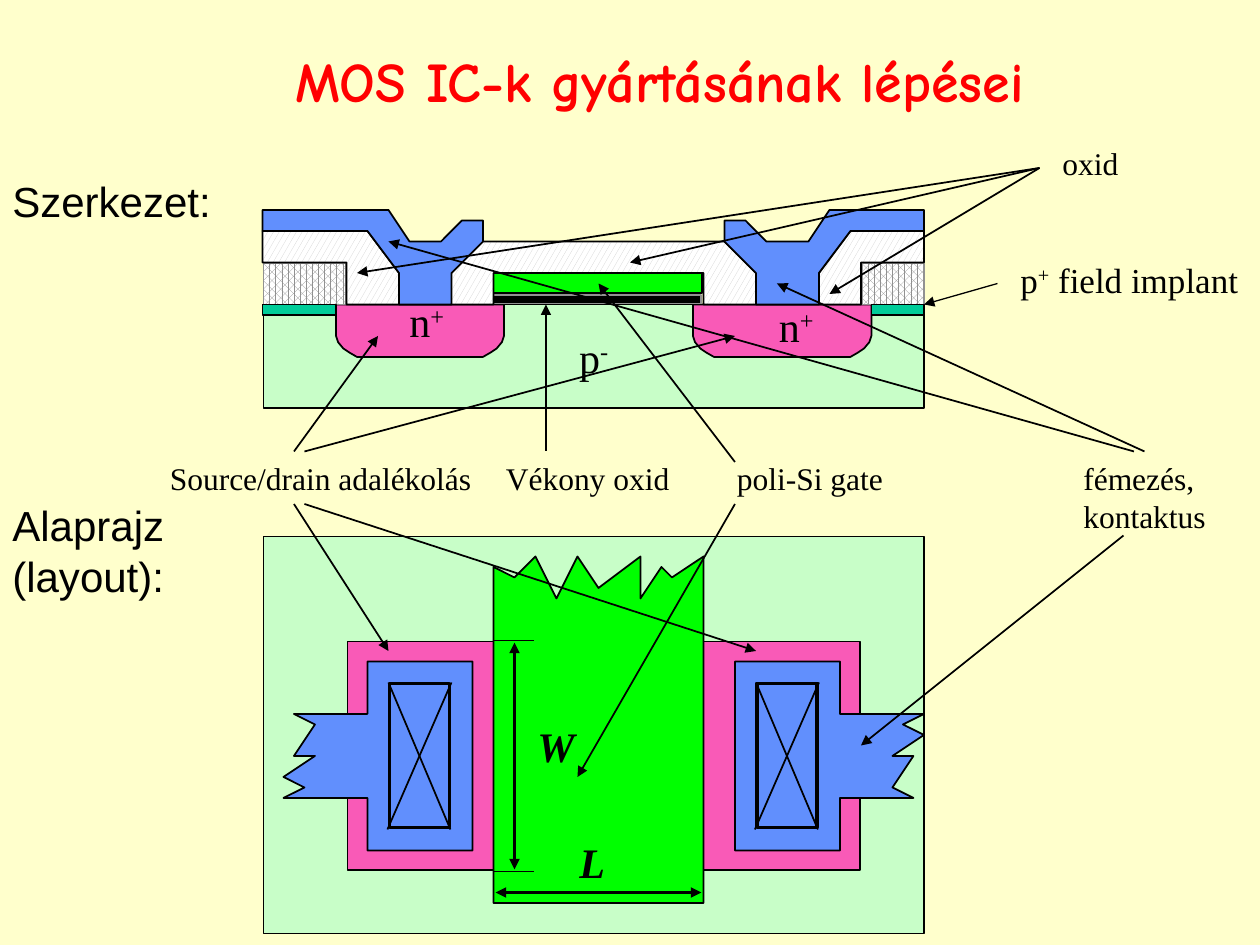
from dataclasses import dataclass
from lxml import etree
from pptx import Presentation
from pptx.dml.color import RGBColor
from pptx.enum.dml import MSO_PATTERN
from pptx.enum.shapes import MSO_CONNECTOR, MSO_SHAPE
from pptx.enum.text import MSO_ANCHOR, MSO_AUTO_SIZE, PP_ALIGN
from pptx.oxml.ns import qn
from pptx.util import Cm, Pt

RECT = MSO_SHAPE.RECTANGLE
STRAIGHT = MSO_CONNECTOR.STRAIGHT
DOTS = MSO_PATTERN.PERCENT_70
FLAKES = MSO_PATTERN.LARGE_CONFETTI
MIDDLE = MSO_ANCHOR.MIDDLE
GROW = MSO_AUTO_SIZE.SHAPE_TO_FIT_TEXT
CENTER = PP_ALIGN.CENTER
GRID = 2.54 / 12


@dataclass(frozen=True)
class Theme:
    """Colours, fonts and type sizes of the slide."""
    back: str = "FFFFCC"
    ink: str = "000000"
    title: str = "FF0000"
    base: str = "C8FEC8"
    doped: str = "F95AB7"
    gate: str = "00FF00"
    metal: str = "618FFD"
    field: str = "00CC99"
    grey: str = "919191"
    pale: str = "CECECE"
    white: str = "FFFFFF"
    serif: str = "Times New Roman"
    sans: str = "Arial"
    comic: str = "Comic Neue"
    small: int = 18
    note: int = 20
    large: int = 24
    head: int = 32


T = Theme()


def rgb(code):
    """Turn a hex code into a colour."""
    return RGBColor.from_string(code)


def apply(item, form):
    """Set each format value on the item."""
    for key, value in form.items():
        setattr(item, key, value)


def write(frame, runs, size=T.large, face=T.serif, hue=T.ink, **form):
    """Write runs in one paragraph; a run may be raised."""
    for part in runs:
        text, rise = part if isinstance(part, tuple) else (part, 0)
        run = frame.paragraphs[0].add_run()
        run.text = text
        apply(run.font, {"size": Pt(size), "name": face, **form})
        run.font.color.rgb = rgb(hue)
        if rise:
            run.font._element.set("baseline", str(rise * 1000))


@dataclass
class Box:
    """A region whose parts are placed in twelfths of an inch."""
    shapes: object
    left: float
    top: float

    def spot(self, x, y):
        """Place a point of the region on the slide."""
        return Cm((self.left + x) * GRID), Cm((self.top + y) * GRID)

    def paint(self, shape, fill, edge=T.ink, width=1):
        """Give a shape its plain or patterned fill and its edge."""
        shape.shadow.inherit = False
        if isinstance(fill, tuple):
            shape.fill.patterned()
            shape.fill.pattern = fill[0]
            shape.fill.fore_color.rgb = rgb(fill[1])
            shape.fill.back_color.rgb = rgb(T.white)
        else:
            shape.fill.solid()
            shape.fill.fore_color.rgb = rgb(fill)
        shape.line.color.rgb = rgb(edge)
        shape.line.width = Pt(width)
        return shape

    def rect(self, x, y, w, h, *look):
        """Draw a rectangle."""
        shape = self.shapes.add_shape(RECT, *self.spot(x, y), Cm(w * GRID), Cm(h * GRID))
        return self.paint(shape, *look)

    def poly(self, points, *look):
        """Draw a closed outline."""
        spots = [self.spot(*point) for point in points]
        build = self.shapes.build_freeform(*spots[0])
        build.add_line_segments(spots[1:], close=True)
        return self.paint(build.convert_to_shape(), *look)

    def line(self, start, end, width=1, tips=()):
        """Draw a line with arrowheads at the named ends."""
        link = self.shapes.add_connector(STRAIGHT, *self.spot(*start), *self.spot(*end))
        link.line.color.rgb = rgb(T.ink)
        link.line.width = Pt(width)
        for tip in tips:
            etree.SubElement(link.line._get_or_add_ln(), qn(f"a:{tip}End")).set("type", "triangle")
        etree.SubElement(link._element.spPr, qn("a:effectLst"))

    def text(self, x, y, w, h, runs, wrap=True, **form):
        """Place a text box."""
        box = self.shapes.add_textbox(*self.spot(x, y), Cm(w * GRID), Cm(h * GRID))
        apply(box.text_frame, {"word_wrap": wrap, "auto_size": GROW})
        write(box.text_frame, runs, **form)


def well(box, x, w):
    """Draw a doped well with bevelled lower corners."""
    side = [(0, 0), (0, 3), (0.2, 3.6), (0.7, 4.2), (1.3, 4.6), (2, 5), (2.8, 5)]
    far = [(w - dx, dy) for dx, dy in reversed(side)]
    box.poly([(x + dx, 9 + dy) for dx, dy in side + far], T.doped)


def section(box):
    """Draw the cross section of the transistor."""
    base = box.rect(0.1, 9, 62.9, 9.9, T.base)
    apply(base.text_frame, {"word_wrap": False, "vertical_anchor": MIDDLE})
    base.text_frame.paragraphs[0].alignment = CENTER
    write(base.text_frame, ["p", ("-", 30)])
    for x, w in ((7, 16), (41, 17)):
        well(box, x, w)
    box.rect(22, 8.1, 19.8, 0.8, T.ink, T.grey)
    for x, w in ((57.1, 5.9), (0.1, 7.8)):
        box.rect(x, 5.1, w, 3.9, (DOTS, T.grey), T.grey)
    box.rect(22, 6, 19.9, 1.9, T.gate)
    box.poly([(0, 2), (10, 2), (13, 6), (18, 6), (21, 3), (44, 3), (47, 6),
              (53, 6), (56, 2), (63, 2), (63, 5), (57, 5), (57, 9), (42, 9),
              (42, 6), (22, 6), (22, 9), (8, 9), (8, 5), (0, 5)], (FLAKES, T.pale))
    box.poly([(0, 0), (12, 0), (14, 3), (17, 3), (19, 1), (21, 1), (21, 3),
              (18, 6), (18, 9), (13, 9), (13, 6), (10, 2), (0, 2)], T.metal)
    box.poly([(44, 3), (44, 1), (46, 1), (48, 3), (52, 3), (54, 0), (63, 0),
              (63, 2), (56, 2), (53, 6), (53, 9), (47, 9), (47, 6)], T.metal)
    for x, w in ((0, 7), (58, 5)):
        box.rect(x, 9, w, 1, T.field, T.ink, 0.75)
    for x, y in ((12.8, 7.6), (48, 8)):
        box.text(x, y, 5.9, 6, ["n", ("+", 30)], wrap=False)


def hole(box, x):
    """Draw a crossed contact window."""
    box.rect(x + 0.1, 14.1, 5.7, 13.7, T.metal, T.ink, 2)
    box.line((x, 14), (x + 5.9, 28))
    box.line((x + 6, 14), (x - 0.1, 28))


def plan(box):
    """Draw the layout seen from above."""
    box.rect(0.1, 0.1, 62.9, 37.8, T.base)
    box.rect(8.1, 10.1, 48.8, 21.8, T.doped)
    box.poly([(22, 3), (24, 4), (26, 2), (28, 6), (30, 2), (32, 5), (36, 2),
              (36, 6), (38, 3), (39, 4), (42, 2), (42, 35), (22, 35)], T.gate)
    box.poly([(45, 12), (55, 12), (55, 17), (63, 17), (61, 18), (63, 19), (60, 21),
              (62, 21), (60, 24), (62, 25), (55, 25), (55, 30), (45, 30)], T.metal)
    box.poly([(20, 30), (10, 30), (10, 25), (2, 25), (4, 24), (2, 23), (5, 21),
              (3, 21), (5, 18), (3, 17), (10, 17), (10, 12), (20, 12)], T.metal)
    for x in (47, 12):
        hole(box, x)
    for y in (10, 32):
        box.line((22, y), (25.9, y))
    for start, end in (((22.2, 34), (41.8, 34)), ((24, 10.2), (24, 31.8))):
        box.line(start, end, 2, ("head", "tail"))
    for x, y, w, name in ((29, 28.1, 4.9, "L"), (25, 17, 6, "W")):
        box.text(x, y, w, 6, [name], bold=True, italic=True)


def notes(box):
    """Place the labels and their arrows."""
    rays = {(28, 43): [(36, 32)], (29, 43): [(70, 32)], (28, 48): [(37, 62)],
            (29, 48): [(72, 62)], (52, 43): [(52, 29)], (70, 44): [(57, 27)],
            (70, 48): [(55, 74)], (99, 16): [(34, 26), (60, 25), (79, 28)],
            (108, 43): [(37, 23)], (109, 43): [(74, 27)], (107, 51): [(82, 71)]}
    for root, tips in rays.items():
        for tip in tips:
            box.line(tip, root, tips=("head",))
    box.line((95, 27), (88, 29), 0.75, ("tail",))
    for x, y, w, h, text in ((47, 43.1, 21, 4.8, "Vékony oxid"),
                             (15, 43.1, 37, 4.8, "Source/drain adalékolás"),
                             (69, 43.1, 23, 4.8, "poli-Si gate"),
                             (100, 13.1, 17, 4.8, "oxid"),
                             (102, 43.1, 17, 8.4, "fémezés, kontaktus")):
        box.text(x, y, w, h, [text], size=T.small)
    for y, h, text in ((16.1, 6, "Szerkezet:"), (47, 10.8, "Alaprajz (layout):")):
        box.text(0, y, 22, h, [text], face=T.sans)
    box.text(96, 24, 24, 5.2, ["p", ("+", 30), " field implant"], wrap=False, size=T.note)


def title(box):
    """Place the slide title."""
    box.text(0, 0, 82.7, 7.6, ["MOS IC-k gyártásának lépései"], wrap=False,
             size=T.head, face=T.comic, hue=T.title, bold=True)


def main():
    """Build and save the slide."""
    deck = Presentation()
    apply(deck, {"slide_width": Cm(25.4), "slide_height": Cm(19.05)})
    slide = deck.slides.add_slide(deck.slide_layouts[6])
    slide.background.fill.solid()
    slide.background.fill.fore_color.rgb = rgb(T.back)
    for draw, left, top in ((section, 25, 20), (plan, 25, 51), (notes, 0, 0), (title, 27, 3.8)):
        draw(Box(slide.shapes, left, top))
    deck.save("out.pptx")


if __name__ == "__main__":
    main()
